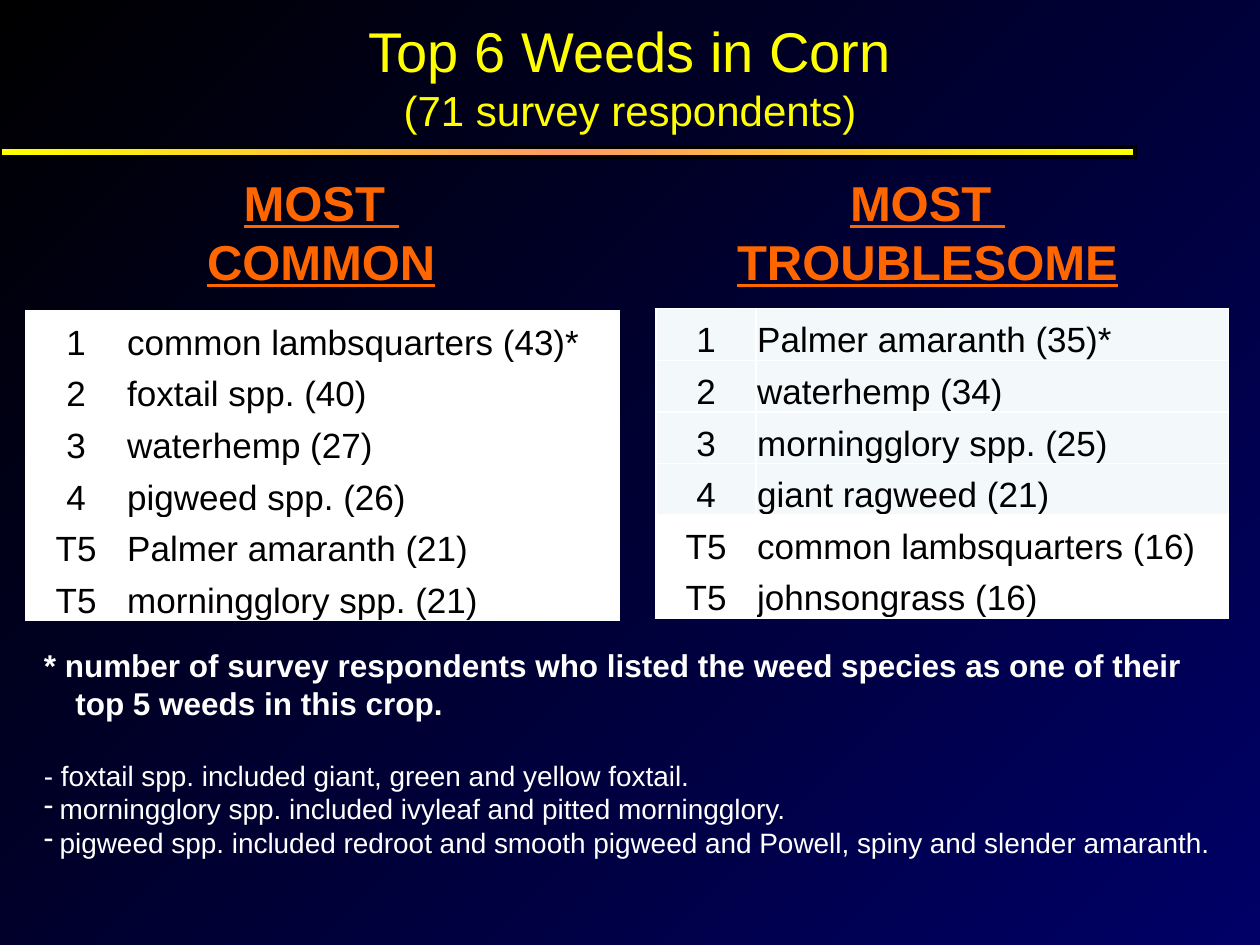
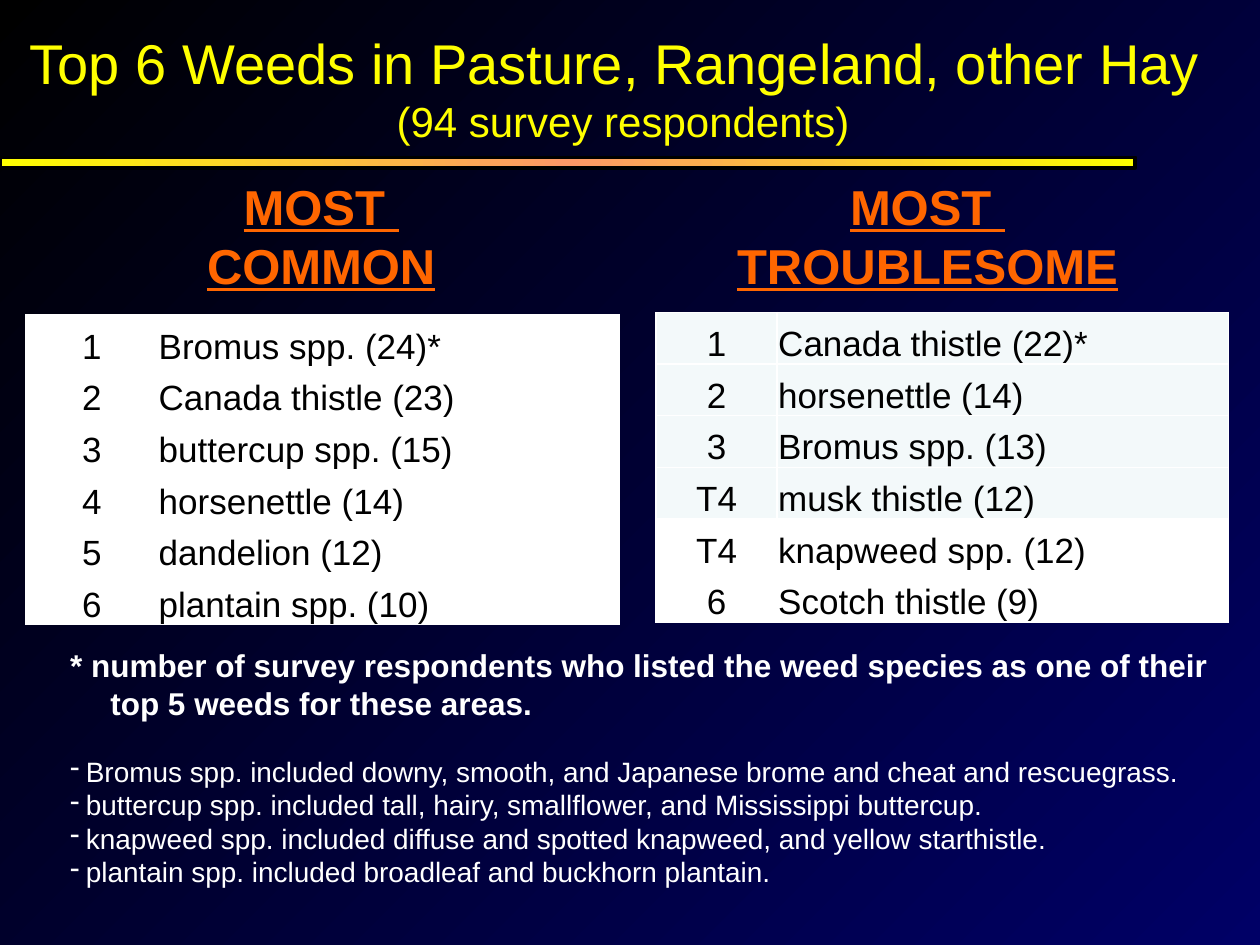
from copy import deepcopy

from lxml.etree import SubElement
from pptx import Presentation
from pptx.dml.color import RGBColor
from pptx.enum.shapes import MSO_SHAPE
from pptx.enum.text import MSO_ANCHOR, MSO_AUTO_SIZE, PP_ALIGN
from pptx.oxml import parse_xml
from pptx.oxml.ns import nsdecls, qn
from pptx.util import Pt

FONT = "Arial"
BLACK, NAVY, WHITE = "000000", "000066", "FFFFFF"
YELLOW, PEACH, ORANGE, PALE = "FFFF00", "FF9966", "FF6600", "F3F9FA"
ROW_HEIGHT = 29.5
LEFT_TABLE, RIGHT_TABLE = (15, 339), (375, 327)  # left, width


def rgb(color):
    return RGBColor.from_string(color)


class Deck:
    """Holds the presentation, its style and the current slide."""

    def __init__(self):
        self.prs = Presentation()
        self.prs.slide_width, self.prs.slide_height = Pt(720), Pt(540)
        self.s = None

    def gradient(self, fill, element, colors, angle):
        fill.gradient()
        fill.gradient_angle = angle
        stops = element.find(".//" + qn("a:gsLst"))
        while len(stops) < len(colors):
            stops.append(deepcopy(stops[-1]))
        for i, (stop, color) in enumerate(zip(fill.gradient_stops, colors)):
            stop.position = i / (len(colors) - 1)
            stop.color.rgb = rgb(color)

    def slide(self):
        self.s = self.prs.slides.add_slide(self.prs.slide_layouts[6])
        self.gradient(self.s.background.fill, self.s._element, [BLACK, NAVY], 315)

    def style(self, p, size, color, bold=False, underline=False):
        for r in p.runs:
            r.font.name, r.font.size = FONT, Pt(size)
            r.font.color.rgb = rgb(color)
            r.font.bold, r.font.underline = bold, underline

    def text(self, box, lines, wrap=True, grow=True):
        """Add a text box and return its text frame, one paragraph a line."""
        tf = self.s.shapes.add_textbox(*map(Pt, box)).text_frame
        tf.text = "\n".join(lines)
        tf.word_wrap = wrap
        if grow:
            tf.auto_size = MSO_AUTO_SIZE.SHAPE_TO_FIT_TEXT
        return tf

    def title(self, box, lines):
        tf = self.text(box, lines, grow=False)
        tf.vertical_anchor = MSO_ANCHOR.MIDDLE
        for p, size in zip(tf.paragraphs, (32, 24)):
            p.alignment = PP_ALIGN.CENTER
            self.style(p, size, YELLOW)

    def rule(self, top):
        sp = self.s.shapes.add_shape(MSO_SHAPE.RECTANGLE, 0, Pt(top), Pt(648.7), Pt(5.8))
        sp.shadow.inherit = False
        self.gradient(sp.fill, sp._element, [YELLOW, PEACH, YELLOW], 0)
        sp.line.color.rgb, sp.line.width = rgb(BLACK), Pt(2.25)

    def heading(self, left, top, width, word, wrap):
        tf = self.text((left, top, width, 75), ["MOST ", word], wrap)
        for p in tf.paragraphs:
            p.alignment = PP_ALIGN.CENTER
            self.style(p, 28, ORANGE, bold=True, underline=True)

    def cell(self, cell, text, fill, align):
        cell.text = text
        cell.vertical_anchor = MSO_ANCHOR.BOTTOM
        cell.margin_left = cell.margin_right = cell.margin_top = Pt(0.72)
        cell.margin_bottom = 0
        cell.fill.solid()
        cell.fill.fore_color.rgb = rgb(fill)
        p = cell.text_frame.paragraphs[0]
        p.alignment = align
        self.style(p, 20, BLACK)
        # White borders, placed before the fill
        for i, side in enumerate("LRTB"):
            cell._tc.get_or_add_tcPr().insert(i, parse_xml(
                f'<a:ln{side} {nsdecls("a")} w="{Pt(1)}"><a:solidFill>'
                f'<a:srgbClr val="{WHITE}"/></a:solidFill></a:ln{side}>'))

    def table(self, place, top, rank_width, rows, tinted=0):
        """Add a ranking whose first tinted rows have the pale fill."""
        left, width = place
        table = self.s.shapes.add_table(
            len(rows), 2, Pt(left), Pt(top), Pt(width), Pt(ROW_HEIGHT * len(rows))).table
        table.first_row = table.horz_banding = False
        table.columns[0].width = Pt(rank_width)
        table.columns[1].width = Pt(width - rank_width)
        for i, (rank, weed) in enumerate(rows):
            table.rows[i].height = Pt(ROW_HEIGHT)
            fill = PALE if i < tinted else WHITE
            self.cell(table.cell(i, 0), rank, fill, PP_ALIGN.CENTER)
            self.cell(table.cell(i, 1), weed, fill, PP_ALIGN.LEFT)

    def footnotes(self, box, hang, gap, lead, notes):
        """Add the bold lead, then the dashed notes below a gap."""
        tf = self.text(box, [lead, *notes])
        for i, p in enumerate(tf.paragraphs):
            self.style(p, 16 if i else 18, WHITE, bold=i == 0)
            indent = 9 if i else hang
            if i == 1:
                p.space_before = Pt(gap)
            pPr = p._p.get_or_add_pPr()
            pPr.set("marL", str(Pt(indent)))
            pPr.set("indent", str(-Pt(indent)))
            if i and not p.text.startswith("-"):
                SubElement(pPr, qn("a:buChar")).set("char", "-")

    def survey(self, title_box, title, rule_top, top, common, troublesome, notes):
        """Build one survey slide; top is where the column headings start."""
        self.slide()
        self.title(title_box, title)
        self.rule(rule_top)
        self.heading(97, top, 173, "COMMON", wrap=True)
        self.heading(412.5, top, 235, "TROUBLESOME", wrap=False)
        self.table(LEFT_TABLE, top + 82.8, *common)
        self.table(RIGHT_TABLE, top + 81.4, *troublesome, tinted=4)
        self.footnotes(*notes)


def main():
    deck = Deck()
    lead = "* number of survey respondents who listed the weed species as one of their top 5 weeds "

    # Corn
    ranks = ["1", "2", "3", "4", "T5", "T5"]
    common = ["common lambsquarters (43)*", "foxtail spp. (40)", "waterhemp (27)",
              "pigweed spp. (26)", "Palmer amaranth (21)", "morningglory spp. (21)"]
    troublesome = ["Palmer amaranth (35)*", "waterhemp (34)", "morningglory spp. (25)",
                   "giant ragweed (21)", "common lambsquarters (16)", "johnsongrass (16)"]
    notes = ["- foxtail spp. included giant, green and yellow foxtail.",
             "morningglory spp. included ivyleaf and pitted morningglory.",
             "pigweed spp. included redroot and smooth pigweed and Powell, spiny and "
             "slender amaranth."]
    deck.survey((24, 0, 672, 86.4), ["Top 6 Weeds in Corn", "(71 survey respondents)"],
                84.2, 95,
                (57, list(zip(ranks, common))),
                (57, list(zip(ranks, troublesome))),
                ((18, 365.8, 684, 131), 18, 20.7, lead + "in this crop.", notes))

    # Pasture, rangeland and other hay
    common = ["Bromus spp. (24)*", "Canada thistle (23)", "buttercup spp. (15)",
              "horsenettle (14)", "dandelion (12)", "plantain spp. (10)"]
    troublesome = ["Canada thistle (22)*", "horsenettle (14)", "Bromus spp. (13)",
                   "musk thistle (12)", "knapweed spp. (12)", "Scotch thistle (9)"]
    notes = ["Bromus spp. included downy, smooth, and Japanese brome and cheat and rescuegrass.",
             "buttercup spp. included tall, hairy, smallflower, and Mississippi buttercup.",
             "knapweed spp. included diffuse and spotted knapweed, and yellow starthistle.",
             "plantain spp. included broadleaf and buckhorn plantain."]
    deck.survey((8, -4.3, 696, 108),
                ["Top 6 Weeds in Pasture, Rangeland, other Hay ", "(94 survey respondents)"],
                90, 97.2,
                (75, list(zip("123456", common))),
                (69, list(zip(["1", "2", "3", "T4", "T4", "6"], troublesome))),
                ((33, 365.8, 666, 147.6), 23, 18.4, lead + "for these areas.", notes))

    deck.prs.save("out.pptx")


if __name__ == "__main__":
    main()
